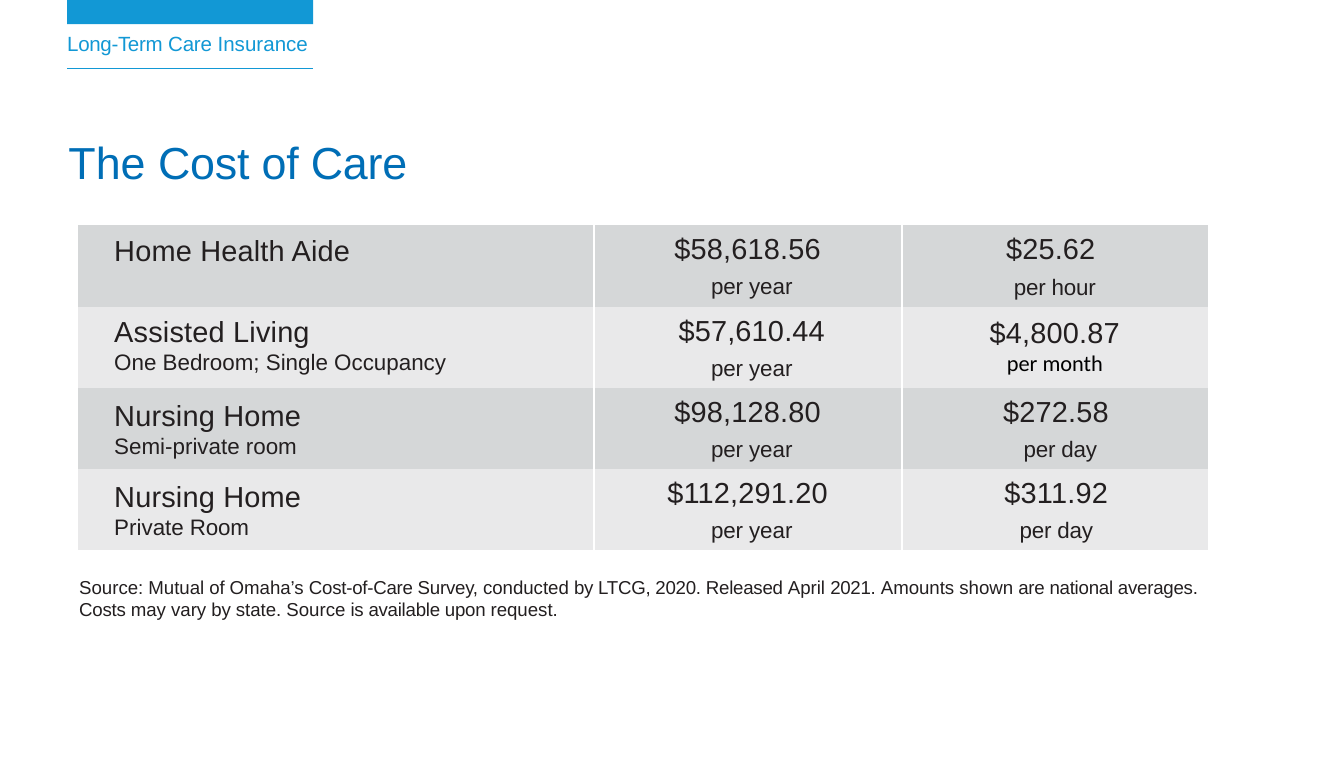
from lxml import etree
from pptx import Presentation
from pptx.dml.color import RGBColor
from pptx.enum.shapes import MSO_CONNECTOR, MSO_SHAPE
from pptx.enum.text import MSO_ANCHOR, PP_ALIGN
from pptx.oxml.ns import qn
from pptx.util import Inches, Pt

RECT = MSO_SHAPE.RECTANGLE
STRAIGHT = MSO_CONNECTOR.STRAIGHT
MIDDLE = MSO_ANCHOR.MIDDLE
CENTER = PP_ALIGN.CENTER

COLORS = {"title": "006EB6", "accent": "1298D5", "text": "231F20", "black": "000000",
          "dark_row": "D5D7D8", "light_row": "E9E9EA", "border": "FFFFFF"}
NO_STYLE = "{2D5ABB26-0587-4C30-8999-92F81FD0307C}"
COLUMNS = [3.84, 2.29, 2.28]
ROW_HEIGHT = 0.6
LAST_ROW_HEIGHT = 0.2
BIG, SMALL = 15.5, 12

YEAR = [("per ", -0.1), ("year", 0)]
HOUR = [("per hour", -0.1)]
DAY = [("per day", -0.1)]
MONTH = [("per month", 0)]
ROWS = [
    (0.07, "Home Health Aide", [],
     ("$58,618.56 ", YEAR, 0.06, 18.1), ("$25.62 ", HOUR, 0, 18.4)),
    (0.06, "Assisted Living", [("One Bedroom; Single Occupancy", 0)],
     ("$57,610.44", YEAR, 0.06, 18.1), ("$4,800.87", MONTH, 0, None)),
    (0.08, "Nursing Home", [("Semi-private room", 0)],
     ("$98,128.80 ", YEAR, 0.06, 18.1), ("$272.58 ", DAY, 0.08, 18.1)),
    (0.08, "Nursing Home", [("Private", 0), (" Room", -0.1)],
     ("$112,291.20 ", YEAR, 0.06, 18.1), ("$311.92", DAY, 0.02, 18.1)),
]
SOURCE = ["Source: Mutual ", "of ", "Omaha’s ", "Cost-of-Care Survey, ", "conducted ",
          "by LTCG, 2020. Released ", "April ", "2021. ", "Amounts shown ",
          "are national averages. Costs ", "may vary ", "by ", "state. Source ",
          "is available upon ", "request."]


def rgb(name):
    return RGBColor.from_string(COLORS[name])


def add_run(p, text, size, color="text", spacing=0, font="Arial"):
    r = p.add_run()
    r.text = text
    r.font.size = Pt(size)
    r.font.name = font
    r.font.color.rgb = rgb(color)
    r.font._element.set("spc", str(round(spacing * 100)))


def add_text(s, left, top, width, height, runs, size, color):
    tf = s.shapes.add_textbox(Inches(left), Inches(top), Inches(width), Inches(height)).text_frame
    tf.word_wrap = True
    tf.margin_left = tf.margin_top = Inches(0.01)
    tf.margin_right = tf.margin_bottom = 0
    for text, spacing in runs:
        add_run(tf.paragraphs[0], text, size, color, spacing)


def add_header(s):
    bar = s.shapes.add_shape(RECT, Inches(0.5), 0, Inches(1.83), Inches(0.18))
    bar.shadow.inherit = False
    bar.fill.solid()
    bar.fill.fore_color.rgb = rgb("accent")
    bar.line.fill.background()
    rule = s.shapes.add_connector(STRAIGHT, Inches(0.5), Inches(0.51), Inches(2.33), Inches(0.51))
    rule.line.color.rgb = rgb("accent")
    rule.line.width = Pt(1)
    etree.SubElement(rule._element.spPr, qn("a:effectLst"))
    add_text(s, 0.49, 0.22, 1.85, 0.2,
             [("Long-Term ", -0.2), ("Care ", -0.1), ("Insurance", 0)], 11, "accent")


def set_indent(p, inches):
    p._p.get_or_add_pPr().set("marL", str(Inches(inches)))


def set_borders(cell, sides):
    tcPr = cell._tc.get_or_add_tcPr()
    for i, side in enumerate(sides):
        ln = etree.Element(qn(f"a:ln{side}"), w=str(Pt(1)))
        fill = etree.SubElement(ln, qn("a:solidFill"))
        etree.SubElement(fill, qn("a:srgbClr"), val=COLORS["border"])
        tcPr.insert(i, ln)


def fill_care_cell(cell, top, name, detail):
    cell.margin_left = cell.margin_right = cell.margin_bottom = 0
    cell.margin_top = Inches(top)
    tf = cell.text_frame
    p = tf.paragraphs[0]
    set_indent(p, 0.27)
    p.line_spacing = Pt(18.2)
    add_run(p, name, BIG, spacing=0.1)
    if detail:
        p = tf.add_paragraph()
        set_indent(p, 0.27)
        p.line_spacing = Pt(14.1)
        for text, spacing in detail:
            add_run(p, text, SMALL, spacing=spacing)


def fill_cost_cell(cell, amount, period, indent, leading):
    cell.vertical_anchor = MIDDLE
    p = cell.text_frame.paragraphs[0]
    p.alignment = CENTER
    set_indent(p, indent)
    if leading:
        p.line_spacing = Pt(leading)
    add_run(p, amount, BIG, spacing=0.1)
    p.add_line_break()
    etree.SubElement(p._p.find(qn("a:br")), qn("a:rPr"), sz=str(round(BIG * 100)))
    color, font = ("black", "Calibri") if period is MONTH else ("text", "Arial")
    for text, spacing in period:
        add_run(p, text, SMALL, color, spacing, font)


def add_cost_table(s):
    heights = [ROW_HEIGHT] * len(ROWS) + [LAST_ROW_HEIGHT]
    frame = s.shapes.add_table(len(heights), len(COLUMNS), Inches(0.58), Inches(1.67),
                               Inches(sum(COLUMNS)), Inches(sum(heights)))
    table = frame.table
    table.first_row = table.horz_banding = False
    table._tbl.tblPr.find(qn("a:tableStyleId")).text = NO_STYLE
    for column, width in zip(table.columns, COLUMNS):
        column.width = Inches(width)
    for row, height in zip(table.rows, heights):
        row.height = Inches(height)
    for i, (top, name, detail, *costs) in enumerate(ROWS):
        fill_care_cell(table.cell(i, 0), top, name, detail)
        for j, cost in enumerate(costs, 1):
            fill_cost_cell(table.cell(i, j), *cost)
        for cell in table.rows[i].cells:
            cell.fill.solid()
            cell.fill.fore_color.rgb = rgb("light_row" if i % 2 else "dark_row")
    for cell in table.rows[len(ROWS)].cells:
        cell.fill.background()
        cell.margin_top = cell.margin_bottom = 0
        etree.SubElement(cell.text_frame.paragraphs[0]._p, qn("a:endParaRPr"), sz="1000")
    for row in table.rows:
        for cell, sides in zip(row.cells, ("R", "LR", "L")):
            set_borders(cell, sides)


def main():
    prs = Presentation()
    prs.slide_width, prs.slide_height = Inches(10), Inches(5.63)
    s = prs.slides.add_slide(prs.slide_layouts[6])
    add_text(s, 0.5, 0.99, 2.57, 0.43, [("The ", 0), ("Cost of Care", -0.1)], 24, "title")
    add_cost_table(s)
    add_text(s, 0.58, 4.27, 8.67, 0.36,
             [(text, -0.1 if i % 2 else 0) for i, text in enumerate(SOURCE)], 10, "text")
    add_header(s)
    prs.save("out.pptx")


if __name__ == "__main__":
    main()
